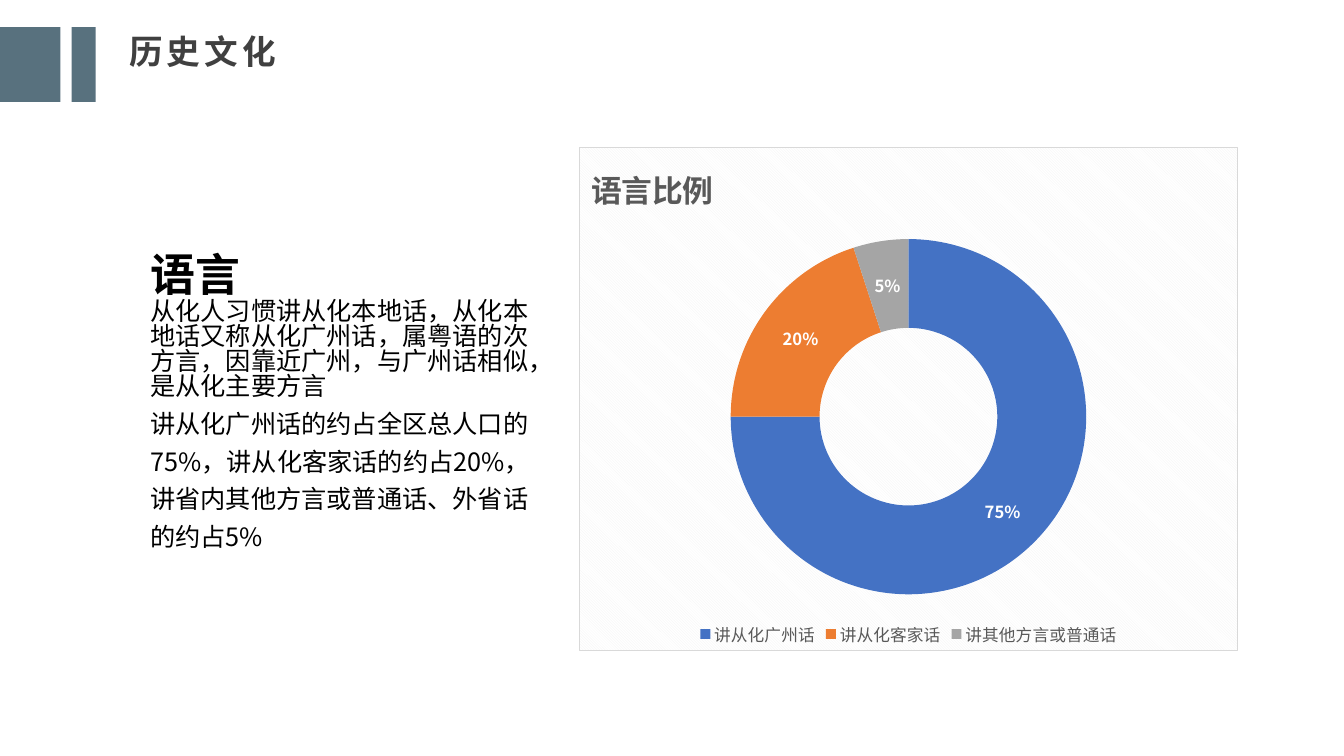
from lxml import etree
from pptx import Presentation
from pptx.chart.data import CategoryChartData
from pptx.dml.color import RGBColor
from pptx.enum.chart import XL_CHART_TYPE, XL_LEGEND_POSITION
from pptx.enum.shapes import MSO_SHAPE
from pptx.enum.text import MSO_ANCHOR, MSO_AUTO_SIZE, PP_ALIGN
from pptx.oxml import parse_xml
from pptx.oxml.ns import nsdecls, qn
from pptx.util import Inches, Pt

RING = XL_CHART_TYPE.DOUGHNUT
BOTTOM = XL_LEGEND_POSITION.BOTTOM
RECT = MSO_SHAPE.RECTANGLE
TOP, MIDDLE = MSO_ANCHOR.TOP, MSO_ANCHOR.MIDDLE
FIXED = MSO_AUTO_SIZE.NONE
LEFT = PP_ALIGN.LEFT

SANS, BODY = "Noto Sans CJK SC", "Noto Sans CJK JP"
SLATE, GREY = "58717E", "595959"

# Wording: text, line spacing, format
LINES = [
    ("语言", 1.0, {"size": Pt(32), "bold": True}),
    ("从化人习惯讲从化本地话，从化本地话又称从化广州话，属粤语的次方言，"
     "因靠近广州，与广州话相似，是从化主要方言", 0.83, {"size": Pt(18), "bold": False}),
    ("讲从化广州话的约占全区总人口的75%，讲从化客家话的约占20%，"
     "讲省内其他方言或普通话、外省话的约占5%", 1.25, {"size": Pt(18), "bold": False}),
]
# Chart data: name, share, colour
SHARES = [
    ("讲从化广州话", 75, "4472C4"),
    ("讲从化客家话", 20, "ED7D31"),
    ("讲其他方言或普通话", 5, "A5A5A5"),
]


def paint(fill, code):
    fill.solid()
    fill.fore_color.rgb = RGBColor.from_string(code)


def style(font, code, face, form):
    paint(font.fill, code)
    for key, value in {"name": face, **form}.items():
        setattr(font, key, value)
    etree.SubElement(font._rPr, qn("a:ea"), typeface=face)


def place(shape, box):
    for key, value in zip(("left", "top", "width", "height"), box):
        setattr(shape, key, Inches(value))


def setup(frame, pads, anchor):
    form = {"word_wrap": True, "auto_size": FIXED, "vertical_anchor": anchor}
    sides = ("margin_left", "margin_top", "margin_right", "margin_bottom")
    form.update(zip(sides, map(Inches, pads)))
    for key, value in form.items():
        setattr(frame, key, value)


def header(slide, box):
    x, y, w, h = box
    # Two bars at the edge
    for left, width in ((0, 0.6), (0.71, 0.24)):
        bar = slide.shapes.add_shape(RECT, *map(Inches, (x + left, y, width, h)))
        bar.shadow.inherit = False
        paint(bar.fill, SLATE)
        bar.line.fill.background()
    # Title
    title = slide.shapes.title
    place(title, (x + 1.21, y + 0.01, w - 1.21, 0.47))
    setup(title.text_frame, (0.07, 0.03, 0.07, 0.03), TOP)
    para = title.text_frame.paragraphs[0]
    para.alignment = LEFT
    run = para.add_run()
    run.text = "历史文化"
    style(run.font, "404040", SANS, {"size": Pt(24), "bold": True})
    run.font._rPr.set("spc", "300")


def story(slide, box):
    body = slide.placeholders[1]
    place(body, box)
    frame = body.text_frame
    setup(frame, (0.1, 0.05, 0.1, 0.05), MIDDLE)
    for i, (text, gap, form) in enumerate(LINES):
        para = frame.add_paragraph() if i else frame.paragraphs[0]
        para.alignment, para.line_spacing = LEFT, gap
        para.space_before = para.space_after = Pt(0)
        # No bullet, no indent
        props = para._p.get_or_add_pPr()
        props.set("marL", "0")
        props.set("indent", "0")
        etree.SubElement(props, qn("a:buNone"))
        run = para.add_run()
        run.text = text
        style(run.font, "000000", BODY, form)


def pin(node, spot, inner=False):
    """Fix a chart part at fractions of the chart area."""
    for old in node.findall(qn("c:layout")):
        node.remove(old)
    layout = etree.Element(qn("c:layout"))
    manual = etree.SubElement(layout, qn("c:manualLayout"))
    items = [("layoutTarget", "inner")] if inner else []
    items += [("xMode", "edge"), ("yMode", "edge")]
    items += zip("xywh", map(str, spot))
    for tag, value in items:
        etree.SubElement(manual, qn("c:" + tag), val=value)
    node.insert(0 if inner else 1, layout)


def ring(slide, box):
    data = CategoryChartData()
    data.categories = [name for name, _, _ in SHARES]
    data.add_series("Series 1", [share for _, share, _ in SHARES])
    chart = slide.shapes.add_chart(RING, *map(Inches, box), data).chart
    style(chart.font, "000000", SANS, {"size": Pt(10)})
    root = chart._chartSpace

    # Hatched ground with a thin border
    root.find(qn("c:chart")).addnext(parse_xml(
        f'<c:spPr {nsdecls("c", "a")}><a:pattFill prst="dkDnDiag">'
        '<a:fgClr><a:srgbClr val="F2F2F2"/></a:fgClr>'
        '<a:bgClr><a:srgbClr val="FFFFFF"/></a:bgClr></a:pattFill>'
        '<a:ln w="9525"><a:solidFill><a:srgbClr val="D9D9D9"/></a:solidFill></a:ln>'
        '</c:spPr>'))

    # Chart title
    chart.has_title = True
    run = chart.chart_title.text_frame.paragraphs[0].add_run()
    run.text = "语言比例"
    style(run.font, GREY, SANS, {"size": Pt(22), "bold": True})
    pin(root.find(".//" + qn("c:title")), (0.01, 0.02))
    pin(root.find(".//" + qn("c:plotArea")), (0.23, 0.18, 0.54, 0.71), True)

    # Legend
    chart.has_legend = True
    legend = chart.legend
    legend.position, legend.include_in_layout = BOTTOM, False
    style(legend.font, GREY, SANS, {"size": Pt(11.9)})

    # Slices and labels
    plot = chart.plots[0]
    plot.vary_by_categories = True
    root.find(".//" + qn("c:holeSize")).set("val", "70")
    for i, (_, _, code) in enumerate(SHARES):
        slot = plot.series[0].points[i].format
        paint(slot.fill, code)
        slot.line.fill.background()
    labels = plot.series[0].data_labels
    labels.show_percentage, labels.show_value = True, False
    labels.number_format, labels.number_format_is_linked = "0%", False
    style(labels.font, "FFFFFF", SANS, {"size": Pt(11.9), "bold": True})


def main():
    deck = Presentation()
    deck.slide_width, deck.slide_height = Inches(13.33), Inches(7.5)
    slide = deck.slides.add_slide(deck.slide_layouts[1])
    header(slide, (0, 0.27, 12.29, 0.74))
    story(slide, (1.39, 1.67, 4.14, 4.58))
    ring(slide, (5.74, 1.46, 6.54, 5))
    deck.save("out.pptx")


if __name__ == "__main__":
    main()
